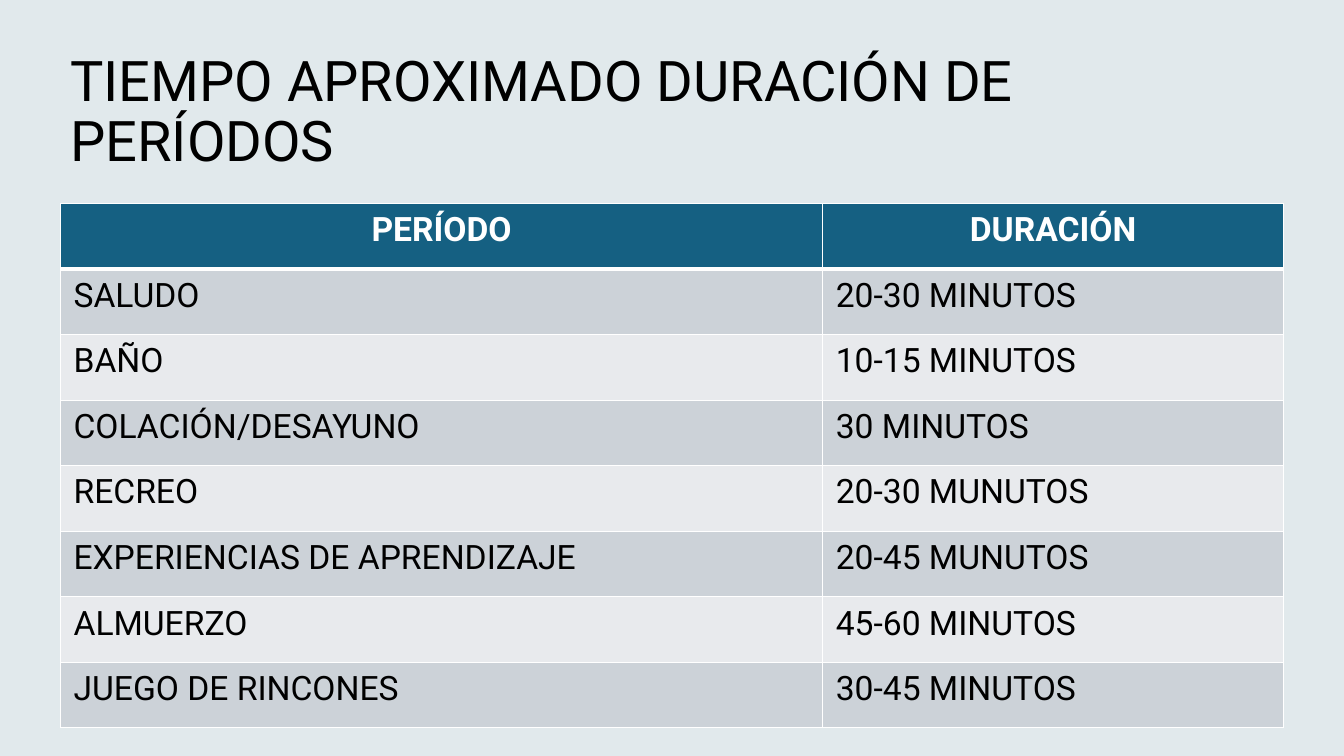
import pptx
import pptx.util
import pptx.dml.color
import pptx.enum.shapes
import pptx.enum.text
import pptx.oxml
import pptx.oxml.ns
import lxml.etree

Inches = pptx.util.Inches
Pt = pptx.util.Pt
RGBColor = pptx.dml.color.RGBColor
Align = pptx.enum.text.PP_ALIGN
Anchor = pptx.enum.text.MSO_ANCHOR

BLACK = RGBColor(0x00, 0x00, 0x00)
WHITE = RGBColor(0xFF, 0xFF, 0xFF)
PALE = RGBColor(0xF2, 0xF2, 0xF2)
TINT = RGBColor(0x0B, 0x76, 0xA0)
HEAD = RGBColor(0x15, 0x60, 0x82)
BANDS = (RGBColor(0xCC, 0xD2, 0xD8), RGBColor(0xE8, 0xEA, 0xED))

WIDE, HIGH = 13.33, 7.5
LEFT, SPAN = 0.6, 12.13
COLS = (7.56, 4.57)
STEP = 0.65

ROWS = (
    ("PERÍODO", "DURACIÓN"),
    ("SALUDO", "20-30 MINUTOS"),
    ("BAÑO", "10-15 MINUTOS"),
    ("COLACIÓN/DESAYUNO", "30 MINUTOS"),
    ("RECREO", "20-30 MUNUTOS"),
    ("EXPERIENCIAS DE APRENDIZAJE", "20-45 MUNUTOS"),
    ("ALMUERZO", "45-60 MINUTOS"),
    ("JUEGO DE RINCONES", "30-45 MINUTOS"),
)


def write(frame, text, size=24, color=BLACK, bold=False, align=Align.LEFT, lead=None):
    """Put one formatted paragraph into a text frame."""
    para = frame.paragraphs[0]
    para.alignment = align
    para.line_spacing = lead
    run = para.add_run()
    run.text = text
    font = run.font
    font.name = "Roboto"
    font.size = Pt(size)
    font.bold = bold
    font.color.rgb = color


def add_back(slide, color, alpha=100):
    """Cover the slide with a plain rectangle of the given opacity."""
    back = slide.shapes.add_shape(
        pptx.enum.shapes.MSO_SHAPE.RECTANGLE, 0, 0, Inches(WIDE), Inches(HIGH))
    back.shadow.inherit = False
    back.line.fill.background()
    back.fill.solid()
    back.fill.fore_color.rgb = color
    if alpha < 100:
        qn = pptx.oxml.ns.qn
        tone = back.fill._xPr.find(qn("a:solidFill")).find(qn("a:srgbClr"))
        lxml.etree.SubElement(tone, qn("a:alpha")).set("val", str(alpha * 1000))


def add_title(slide, text):
    """Add the heading at the top of the slide."""
    box = slide.shapes.add_textbox(
        Inches(LEFT), Inches(0.4), Inches(SPAN), Inches(1.45))
    frame = box.text_frame
    frame.word_wrap = True
    frame.vertical_anchor = Anchor.MIDDLE
    write(frame, text, size=40, lead=0.9)


def add_edge(cell, side, width):
    """Draw a white border on one side of a cell."""
    edge = pptx.oxml.parse_xml(
        f'<a:ln{side} {pptx.oxml.ns.nsdecls("a")} w="{Pt(width)}">'
        f'<a:solidFill><a:srgbClr val="{WHITE}"/></a:solidFill></a:ln{side}>')
    cell._tc.get_or_add_tcPr().append(edge)


def fill_cell(cell, text, row):
    """Style one cell by its row and write its text."""
    cell.margin_left = cell.margin_right = Inches(0.13)
    cell.margin_top = cell.margin_bottom = Inches(0.07)
    edges = {"L": 1, "R": 1, "T": 3 if row == 1 else 1, "B": 1 if row else 3}
    for side, width in edges.items():
        add_edge(cell, side, width)
    cell.fill.solid()
    if row:
        cell.fill.fore_color.rgb = BANDS[(row - 1) % 2]
        write(cell.text_frame, text)
    else:
        cell.fill.fore_color.rgb = HEAD
        write(cell.text_frame, text, color=WHITE, bold=True, align=Align.CENTER)


def add_times(slide):
    """Add the table of periods and durations."""
    table = slide.shapes.add_table(
        len(ROWS), len(COLS), Inches(LEFT), Inches(2.02),
        Inches(SPAN), Inches(STEP * len(ROWS))).table
    for col, width in zip(table.columns, COLS):
        col.width = Inches(width)
    for row, texts in enumerate(ROWS):
        for col, text in enumerate(texts):
            fill_cell(table.cell(row, col), text, row)


def main():
    """Build the slide and save it."""
    deck = pptx.Presentation()
    deck.slide_width = Inches(WIDE)
    deck.slide_height = Inches(HIGH)
    slide = deck.slides.add_slide(deck.slide_layouts[6])
    add_back(slide, PALE)
    add_back(slide, TINT, alpha=7)
    add_title(slide, "TIEMPO APROXIMADO DURACIÓN DE PERÍODOS")
    add_times(slide)
    deck.save("out.pptx")


if __name__ == "__main__":
    main()
